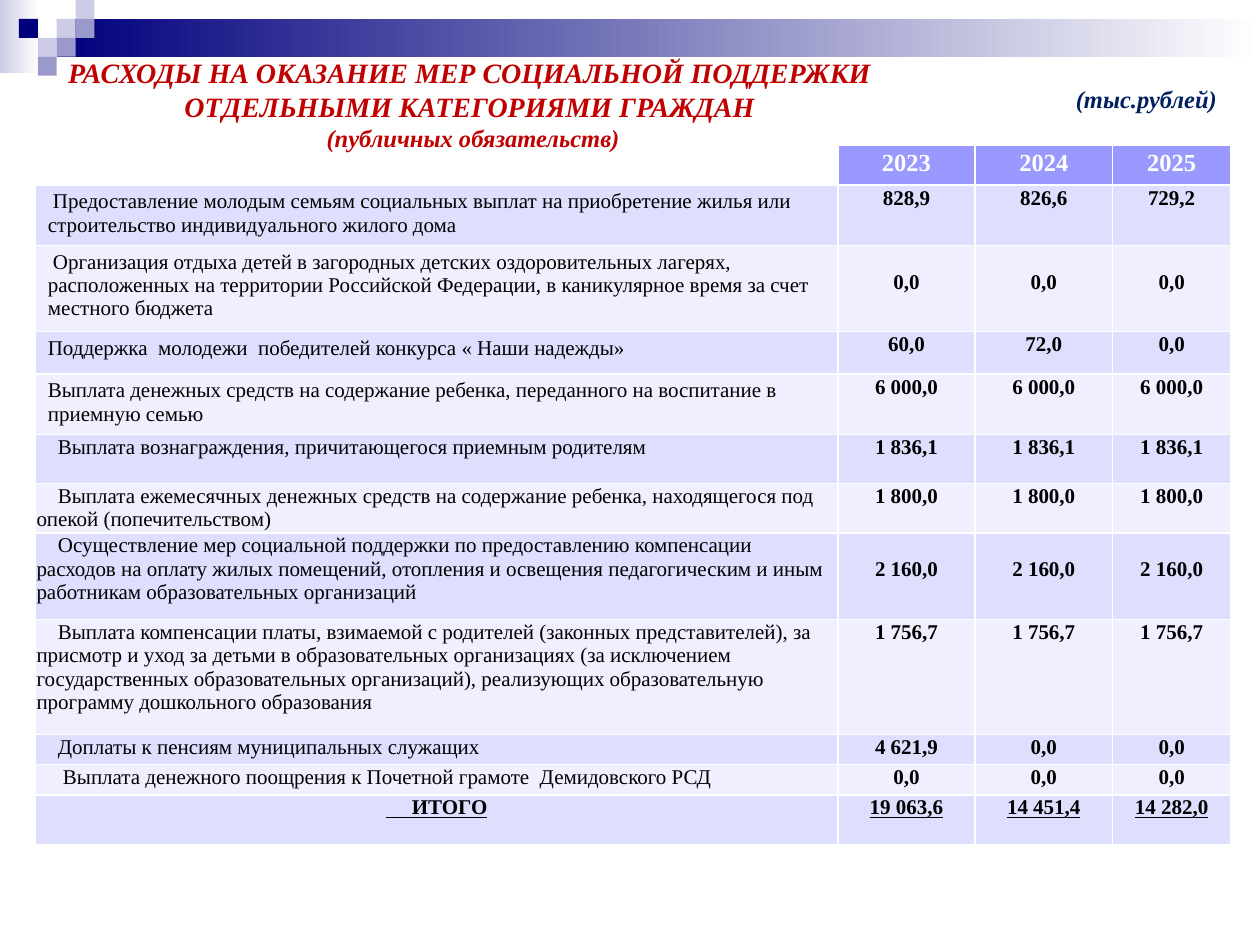
from pptx import Presentation
from pptx.dml.color import RGBColor
from pptx.enum.shapes import MSO_SHAPE as Shape
from pptx.enum.text import MSO_ANCHOR as Anchor, MSO_AUTO_SIZE as AutoSize, PP_ALIGN as Align
from pptx.util import Inches, Pt

FONT = "Times New Roman"
WHITE = RGBColor(0xFF, 0xFF, 0xFF)
BLACK = RGBColor(0x00, 0x00, 0x00)
NAVY = RGBColor(0x00, 0x00, 0x7D)
LAVENDER = RGBColor(0xCC, 0xCC, 0xE6)
VIOLET = RGBColor(0x99, 0x99, 0xCC)
RED = RGBColor(0xC0, 0x00, 0x00)
DARK_BLUE = RGBColor(0x00, 0x20, 0x60)
HEADER_FILL = RGBColor(0x99, 0x99, 0xFF)
BAND_FILLS = (RGBColor(0xDE, 0xDE, 0xFF), RGBColor(0xEF, 0xEF, 0xFF))

SQUARE = 0.15
SQUARES = [
    (3, 1, LAVENDER), (4, 0, LAVENDER), (4, 1, VIOLET), (2, 2, LAVENDER),
    (1, 1, NAVY), (3, 2, VIOLET), (2, 3, VIOLET),
]

TITLE_LINES = [
    ("РАСХОДЫ НА ОКАЗАНИЕ МЕР СОЦИАЛЬНОЙ ПОДДЕРЖКИ ", 16),
    ("ОТДЕЛЬНЫМИ КАТЕГОРИЯМИ ГРАЖДАН ", 16),
    ("(публичных обязательств)", 14),
]

YEARS = ["2023", "2024", "2025"]
COLUMN_WIDTHS = [6.37, 1.09, 1.09, 0.94]
HEADER_HEIGHT = 0.32
PADDED = (0.1, 0.04, 0.1, 0.04)
TIGHT = (0.01, 0.01, 0.01, 0)
LOWERED = (0.01, 0.2, 0.01, 0)

EXPENSES = [
    (0.48, PADDED, 0.04, TIGHT, "Предоставление молодым семьям социальных выплат на приобретение жилья "
     "или строительство индивидуального жилого дома", ["828,9", "826,6", "729,2"]),
    (0.68, PADDED, 0.04, LOWERED, "Организация отдыха детей в загородных детских оздоровительных лагерях, "
     "расположенных на территории Российской Федерации, в каникулярное время за счет местного бюджета",
     ["0,0"] * 3),
    (0.34, PADDED, 0, TIGHT, "Поддержка  молодежи  победителей конкурса « Наши надежды»",
     ["60,0", "72,0", "0,0"]),
    (0.48, PADDED, 0, TIGHT, "Выплата денежных средств на содержание ребенка, переданного на "
     "воспитание в приемную семью", ["6 000,0"] * 3),
    (0.39, TIGHT, 0.17, TIGHT, "Выплата вознаграждения, причитающегося приемным родителям",
     ["1 836,1"] * 3),
    (0.39, TIGHT, 0.17, TIGHT, "Выплата ежемесячных денежных средств на содержание ребенка, "
     "находящегося под опекой (попечительством)", ["1 800,0"] * 3),
    (0.69, TIGHT, 0.17, LOWERED, "Осуществление мер социальной поддержки по предоставлению компенсации "
     "расходов на оплату жилых помещений, отопления и освещения педагогическим и иным "
     "работникам образовательных организаций", ["2 160,0"] * 3),
    (0.91, TIGHT, 0.17, TIGHT, "Выплата компенсации платы, взимаемой с родителей (законных "
     "представителей), за присмотр и уход за детьми в образовательных организациях (за исключением "
     "государственных образовательных организаций), реализующих образовательную "
     "программу дошкольного образования", ["1 756,7"] * 3),
    (0.24, TIGHT, 0.17, TIGHT, "Доплаты к пенсиям муниципальных служащих", ["4 621,9", "0,0", "0,0"]),
    (0.24, TIGHT, 0.21, TIGHT, "Выплата денежного поощрения к Почетной грамоте  Демидовского РСД",
     ["0,0"] * 3),
]
TOTAL_HEIGHT = 0.4
TOTAL_LABEL = "     ИТОГО"
TOTALS = ["19 063,6", "14 451,4", "14 282,0"]


def write(paragraph, text, size, color, align=Align.LEFT, **formats):
    """Add one formatted run to a paragraph."""
    paragraph.alignment = align
    run = paragraph.add_run()
    run.text = text
    run.font.color.rgb = color
    for name, value in {"name": FONT, "size": Pt(size), **formats}.items():
        setattr(run.font, name, value)


def add_rectangle(slide, box, *colors):
    """Add a borderless rectangle, solid for one colour or a gradient for two."""
    shape = slide.shapes.add_shape(Shape.RECTANGLE, *map(Inches, box))
    shape.shadow.inherit = False
    shape.line.fill.background()
    if len(colors) == 1:
        shape.fill.solid()
        shape.fill.fore_color.rgb = colors[0]
        return
    shape.fill.gradient()
    shape.fill.gradient_angle = 0
    for stop, color in zip(shape.fill.gradient_stops, colors):
        stop.color.rgb = color


def add_banner(slide, box):
    """Draw the gradient bars and the mosaic of squares along the top."""
    left, top, width, height = box
    bar_left = left + 3 * SQUARE
    add_rectangle(slide, (left, top, 0.31, height), LAVENDER, WHITE)
    add_rectangle(slide, (bar_left, top + SQUARE, left + width - bar_left, 2 * SQUARE), NAVY, WHITE)
    for column, row, color in SQUARES:
        add_rectangle(slide, (left + column * SQUARE, top + row * SQUARE, SQUARE, SQUARE), color)


def place_title(slide, box):
    """Bring the title placeholder to the front and write its centred lines."""
    title = slide.shapes.title
    title.element.getparent().append(title.element)
    title.left, title.top, title.width, title.height = map(Inches, box)
    frame = title.text_frame
    frame.vertical_anchor = Anchor.TOP
    frame.auto_size = AutoSize.SHAPE_TO_FIT_TEXT
    for index, (text, size) in enumerate(TITLE_LINES):
        paragraph = frame.add_paragraph() if index else frame.paragraphs[0]
        write(paragraph, text, size, RED, Align.CENTER, bold=True, italic=True)


def add_units(slide, box):
    """Add the caption naming the unit of the amounts."""
    frame = slide.shapes.add_textbox(*map(Inches, box)).text_frame
    frame.word_wrap = False
    write(frame.paragraphs[0], "(тыс.рублей)", 14, DARK_BLUE, bold=True, italic=True)


def fill_cell(cell, text, color, margins, size=12, ink=BLACK, align=Align.CENTER, indent=0, **formats):
    """Colour a table cell and write its text."""
    cell.fill.solid()
    cell.fill.fore_color.rgb = color
    set_margins(cell, margins)
    paragraph = cell.text_frame.paragraphs[0]
    write(paragraph, text, size, ink, align, **formats)
    if indent:
        paragraph._p.get_or_add_pPr().set("indent", str(Inches(indent)))


def set_margins(cell, margins):
    """Set the left, top, right and bottom margins of a cell."""
    for side, value in zip(("left", "top", "right", "bottom"), margins):
        setattr(cell, f"margin_{side}", Inches(value))


def add_expense_table(slide, box):
    """Add the table of expenses by year with its total row."""
    heights = [HEADER_HEIGHT, *(expense[0] for expense in EXPENSES), TOTAL_HEIGHT]
    table = slide.shapes.add_table(len(heights), len(COLUMN_WIDTHS), *map(Inches, box)).table
    for column, width in zip(table.columns, COLUMN_WIDTHS):
        column.width = Inches(width)
    for row, height in zip(table.rows, heights):
        row.height = Inches(height)

    corner = table.cell(0, 0)
    corner.fill.background()
    set_margins(corner, (0, 0, 0, 0))
    for column, year in enumerate(YEARS, 1):
        fill_cell(table.cell(0, column), year, HEADER_FILL, PADDED, 14, WHITE, bold=True)

    for row, (_, margins, indent, value_margins, label, values) in enumerate(EXPENSES, 1):
        color = BAND_FILLS[(row - 1) % 2]
        fill_cell(table.cell(row, 0), label, color, margins, align=Align.LEFT, indent=indent, bold=False)
        for column, value in enumerate(values, 1):
            fill_cell(table.cell(row, column), value, color, value_margins, bold=True)

    for column, text in enumerate([TOTAL_LABEL, *TOTALS]):
        fill_cell(table.cell(len(heights) - 1, column), text, BAND_FILLS[0], TIGHT, bold=True, underline=True)


def main():
    """Build the slide and save the presentation."""
    presentation = Presentation()
    presentation.slide_width, presentation.slide_height = Inches(10), Inches(7.5)
    slide = presentation.slides.add_slide(presentation.slide_layouts[5])
    add_banner(slide, (0, 0, 10, 0.58))
    add_expense_table(slide, (0.28, 1.15, 9.49, 5.56))
    place_title(slide, (0.16, 0.39, 7.19, 0.88))
    add_units(slide, (8.44, 0.62, 1.33, 0.34))
    presentation.save("out.pptx")


if __name__ == "__main__":
    main()
